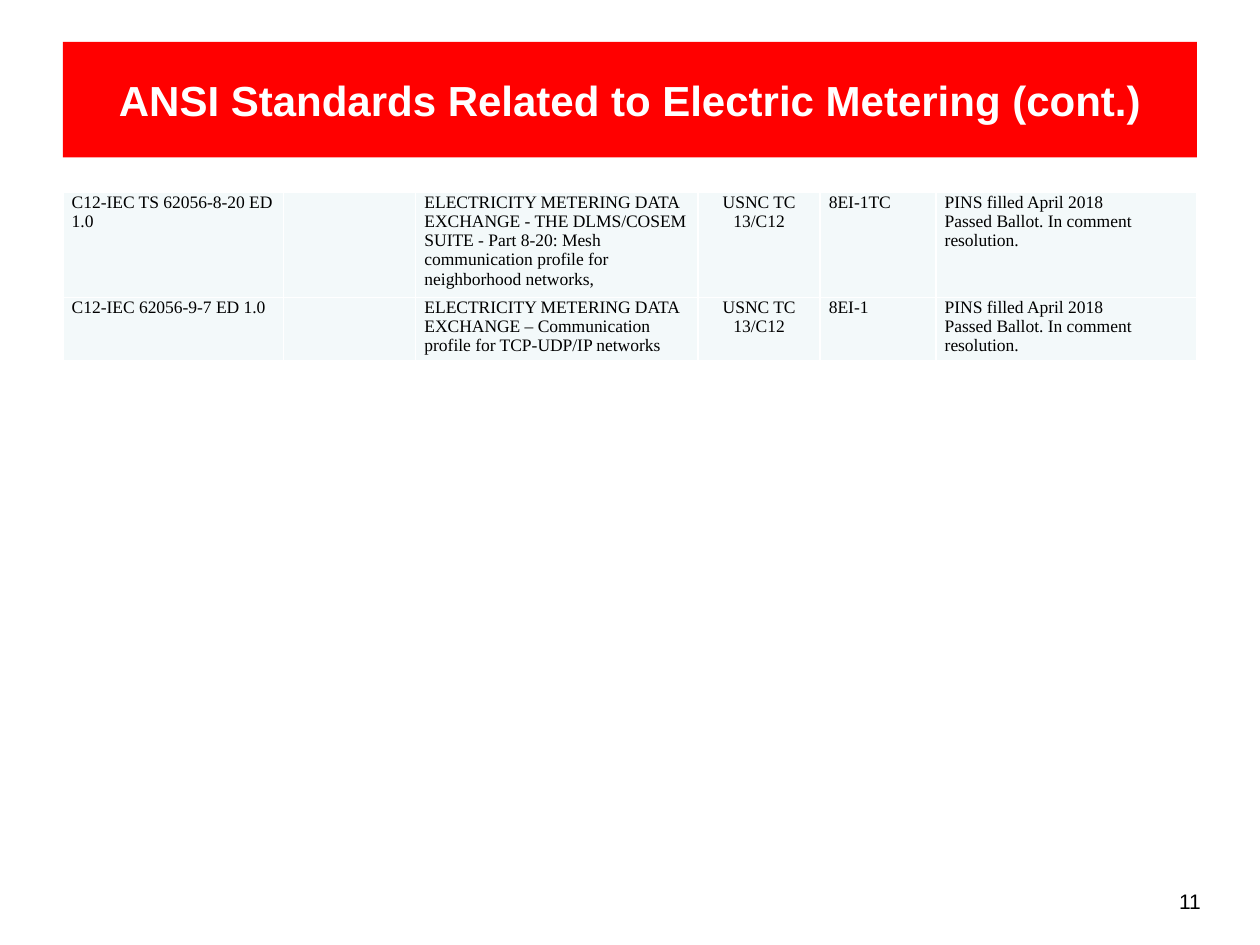
from pptx import Presentation
from pptx.util import Pt
from pptx.dml.color import RGBColor
from pptx.enum.shapes import MSO_SHAPE as Shape
from pptx.enum.text import MSO_ANCHOR as Anchor, PP_ALIGN as Align
from pptx.oxml import parse_xml
from pptx.oxml.ns import nsdecls

HEX = {"red": "FF0000", "white": "FFFFFF", "black": "000000", "pale": "F3F9FA"}
WIDTHS = [126, 75.6, 161.3, 69.8, 66.2, 149.1]
HEIGHTS = [46, 34.5]
STATUS = "PINS filled April 2018\nPassed Ballot. In comment resolution."
ROWS = [
    ["C12-IEC TS 62056-8-20 ED 1.0", "",
     "ELECTRICITY METERING DATA EXCHANGE - THE DLMS/COSEM SUITE - Part 8-20: "
     "Mesh communication profile for neighborhood networks,",
     "USNC TC 13/C12", "8EI-1TC", STATUS],
    ["C12-IEC 62056-9-7 ED 1.0", "",
     "ELECTRICITY METERING DATA EXCHANGE – Communication profile for "
     "TCP-UDP/IP networks",
     "USNC TC 13/C12", "8EI-1", STATUS],
]
GROUP_COL = 3


def color(name):
    return RGBColor.from_string(HEX[name])


def write(frame, text, size=10, face="Arial", ink="black", bold=False,
          align=Align.LEFT):
    frame.word_wrap = True
    for i, line in enumerate(text.split("\n")):
        para = frame.add_paragraph() if i else frame.paragraphs[0]
        para.text = line
        para.alignment = align
        font = para.font
        font.size, font.name, font.bold = Pt(size), face, bold
        font.color.rgb = color(ink)


def add_title(slide, x, y, w, h):
    bar = slide.shapes.add_shape(Shape.RECTANGLE, Pt(x), Pt(y), Pt(w), Pt(h))
    bar.shadow.inherit = False
    bar.fill.solid()
    bar.fill.fore_color.rgb = color("red")
    bar.line.fill.background()
    bar.text_frame.vertical_anchor = Anchor.MIDDLE
    write(bar.text_frame, "ANSI Standards Related to Electric Metering (cont.)",
          size=24, ink="white", bold=True, align=Align.CENTER)


def add_borders(cell, width=1):
    props = cell._tc.get_or_add_tcPr()
    for i, side in enumerate(("lnL", "lnR", "lnT", "lnB")):
        props.insert(i, parse_xml(
            f'<a:{side} {nsdecls("a")} w="{Pt(width)}"><a:solidFill>'
            f'<a:srgbClr val="{HEX["white"]}"/></a:solidFill></a:{side}>'))


def add_standards(slide, x, y):
    table = slide.shapes.add_table(
        len(ROWS), len(WIDTHS), Pt(x), Pt(y),
        Pt(sum(WIDTHS)), Pt(sum(HEIGHTS))).table
    table.first_row = table.horz_banding = False
    for col, width in zip(table.columns, WIDTHS):
        col.width = Pt(width)
    for r, texts in enumerate(ROWS):
        table.rows[r].height = Pt(HEIGHTS[r])
        for c, text in enumerate(texts):
            cell = table.cell(r, c)
            cell.margin_left = cell.margin_right = Pt(5)
            cell.margin_top = cell.margin_bottom = 0
            cell.fill.solid()
            cell.fill.fore_color.rgb = color("pale")
            add_borders(cell)
            write(cell.text_frame, text, face="Times New Roman",
                  align=Align.CENTER if c == GROUP_COL else Align.LEFT)


def add_number(slide, x, y, w, h):
    box = slide.shapes.add_textbox(Pt(x), Pt(y), Pt(w), Pt(h))
    write(box.text_frame, "11", size=12)


def main():
    deck = Presentation()
    deck.slide_width, deck.slide_height = Pt(720), Pt(540)
    slide = deck.slides.add_slide(deck.slide_layouts[6])
    add_number(slide, 666.7, 504, 34.6, 21.6)
    add_title(slide, 36, 24, 648, 66)
    add_standards(slide, 36, 110)
    deck.save("out.pptx")


if __name__ == "__main__":
    main()
